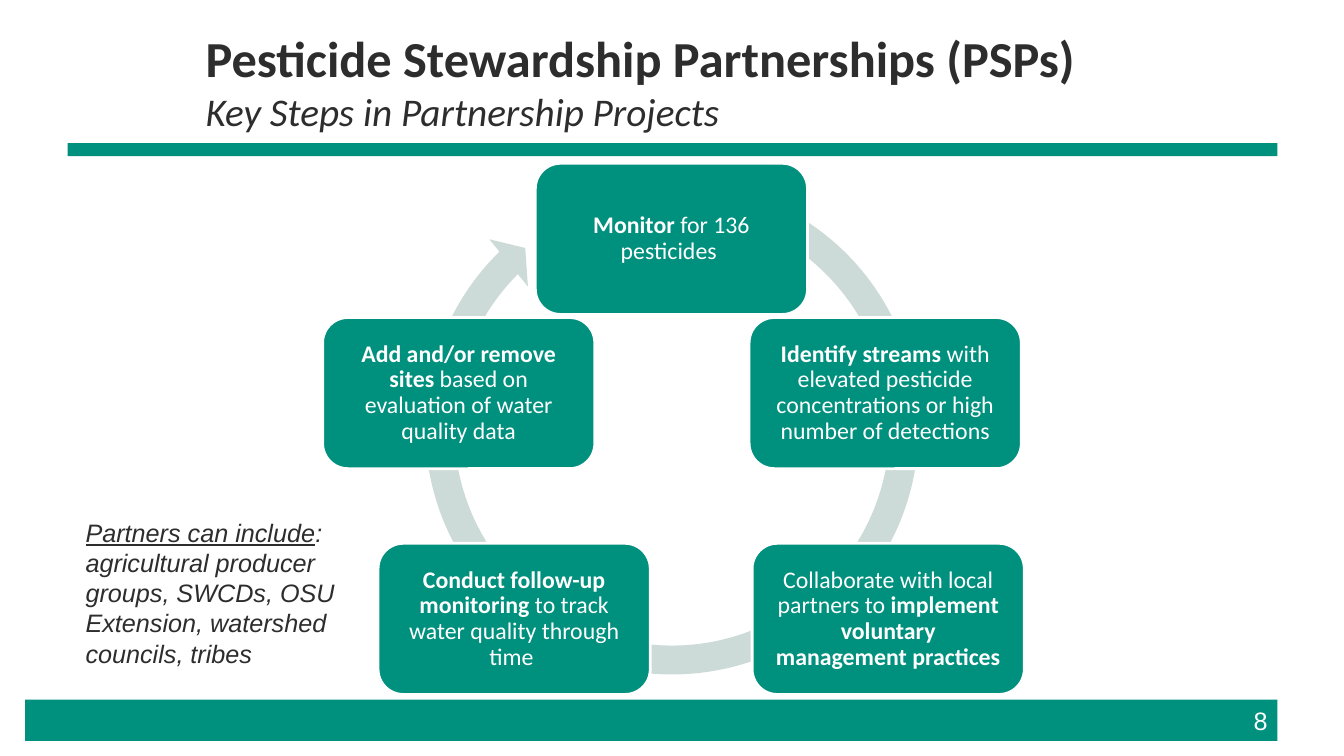
import pptx
import pptx.util
import pptx.dml.color
import pptx.enum.shapes
import pptx.enum.text

Inches = pptx.util.Inches
Pt = pptx.util.Pt
SHAPE = pptx.enum.shapes.MSO_SHAPE
ALIGN = pptx.enum.text.PP_ALIGN
ANCHOR = pptx.enum.text.MSO_ANCHOR

GREEN, PALE, WHITE, INK = "00907E", "CCDBD8", "FFFFFF", "2D2D2D"
STEP_W, STEP_H, STEP_INSET = 2.7, 1.5, 0.14
STEPS = [
    (5.31, 1.62, [("Monitor", "b"), (" for 136 pesticides ", "")]),
    (7.43, 3.15, [("Identify streams", "b"),
                  (" with elevated pesticide concentrations or high number of detections", "")]),
    (7.46, 5.39, [("Collaborate with local partners to ", ""),
                  ("implement voluntary management practices", "b")]),
    (3.75, 5.39, [("Conduct follow-up monitoring", "b"),
                  (" to track water quality through time ", "")]),
    (3.2, 3.15, [("Add and/or remove sites", "b"),
                 (" based on evaluation of water quality data", "")]),
]


def rgb(color):
    """Turn a hex string into a colour."""
    return pptx.dml.color.RGBColor.from_string(color)


def add_runs(p, parts, size, font, color):
    """Add runs to a paragraph; each part is text and a style of b, i, u letters."""
    for text, style in parts:
        r = p.add_run()
        r.text = text
        r.font.size = Pt(size)
        r.font.name = font
        r.font.color.rgb = rgb(color)
        r.font.bold = "b" in style
        r.font.italic = "i" in style
        r.font.underline = "u" in style


def add_block(s, kind, x, y, w, h, fill):
    """Add a flat filled shape without outline."""
    sp = s.shapes.add_shape(kind, Inches(x), Inches(y), Inches(w), Inches(h))
    sp.shadow.inherit = False
    sp.fill.solid()
    sp.fill.fore_color.rgb = rgb(fill)
    sp.line.fill.background()
    return sp


def add_step(s, x, y, parts):
    """Add one rounded step of the cycle with its text."""
    sp = add_block(s, SHAPE.ROUNDED_RECTANGLE, x, y, STEP_W, STEP_H, GREEN)
    sp.line.color.rgb = rgb(WHITE)
    sp.line.width = Pt(2)
    tf = sp.text_frame
    tf.word_wrap = True
    tf.vertical_anchor = ANCHOR.MIDDLE
    tf.margin_left = tf.margin_right = Inches(STEP_INSET)
    tf.margin_top = tf.margin_bottom = Inches(STEP_INSET)
    p = tf.paragraphs[0]
    p.alignment = ALIGN.CENTER
    p.line_spacing = 0.9
    add_runs(p, parts, 17, "Calibri", WHITE)


def add_text(s, x, y, w, h):
    """Add a wrapping text box and return its text frame."""
    tf = s.shapes.add_textbox(Inches(x), Inches(y), Inches(w), Inches(h)).text_frame
    tf.word_wrap = True
    return tf


def main():
    """Build the slide and save it."""
    prs = pptx.Presentation()
    prs.slide_width = Inches(13.33)
    prs.slide_height = Inches(7.5)
    s = prs.slides.add_slide(prs.slide_layouts[6])

    add_block(s, SHAPE.RECTANGLE, 0.25, 6.94, 12.42, 0.41, GREEN)
    add_block(s, SHAPE.RECTANGLE, 0.67, 1.42, 12, 0.13, GREEN)

    title = add_text(s, 1.94, 0.19, 9.45, 1.22)
    title.vertical_anchor = ANCHOR.MIDDLE
    add_runs(title.paragraphs[0], [("Pesticide Stewardship Partnerships (PSPs)", "b")],
             36, "Calibri", INK)
    add_runs(title.add_paragraph(), [("Key Steps in Partnership Projects", "i")],
             28, "Calibri", INK)

    cycle = add_block(s, SHAPE.CIRCULAR_ARROW, 4.06, 1.64, 5.21, 5.21, PALE)
    for i, value in enumerate([0.055, 3.307, 135.18, 175.45, 0.058]):
        cycle.adjustments[i] = value
    for x, y, parts in STEPS:
        add_step(s, x, y, parts)

    partners = add_text(s, 0.75, 5.08, 3, 1.62)
    add_runs(partners.paragraphs[0],
             [("Partners can include", "iu"),
              (": agricultural producer groups, SWCDs, OSU Extension, "
               "watershed councils, tribes", "i")], 18, "Arial", INK)

    number = add_text(s, 9.56, 6.95, 3.11, 0.4)
    number.paragraphs[0].alignment = ALIGN.RIGHT
    add_runs(number.paragraphs[0], [("8", "")], 18, "Arial", WHITE)

    prs.save("out.pptx")


if __name__ == "__main__":
    main()
